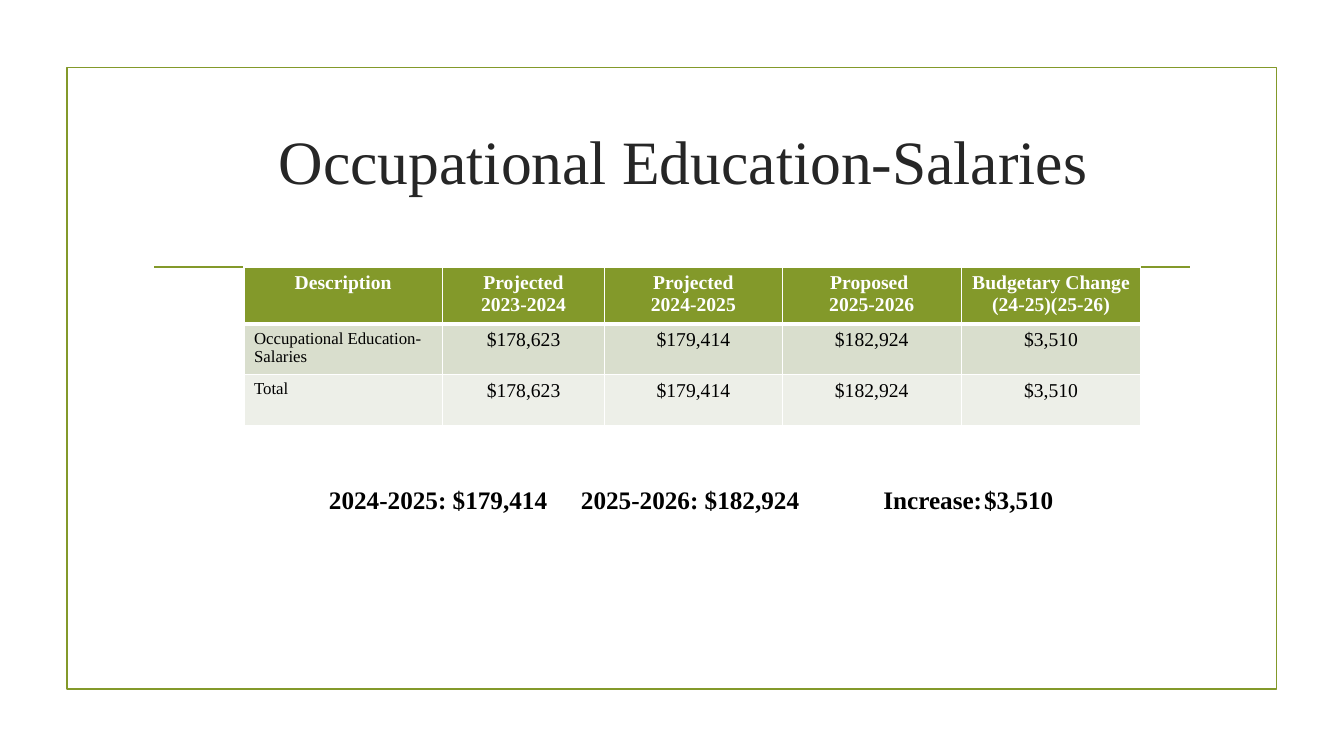
from dataclasses import dataclass

from lxml.etree import SubElement
from pptx import Presentation
from pptx.dml.color import RGBColor as RGB
from pptx.enum.shapes import MSO_CONNECTOR as Conn, MSO_SHAPE as Shape
from pptx.enum.text import MSO_ANCHOR as Anchor, PP_ALIGN as Align
from pptx.oxml.ns import qn
from pptx.util import Cm, Pt

TITLE = "Occupational Education-Salaries "
ROWS = [
    ["Description", "Projected\n2023-2024", "Projected\n2024-2025",
     "Proposed \n2025-2026", "Budgetary Change \n(24-25)(25-26)"],
    ["Occupational Education-Salaries", "$178,623", "$179,414", "$182,924", "$3,510"],
    ["Total", "$178,623", "$179,414", "$182,924", "$3,510"],
]
SUMMARY = "2024-2025: $179,414\t2025-2026: $182,924\t\tIncrease:\t$3,510"
COL_WIDTHS = [5, 4.09, 4.47, 4.52, 4.52]
ROW_HEIGHTS = [1.44, 1.27, 1.27]


@dataclass(frozen=True)
class Theme:
    font: str = "Times New Roman"
    accent: str = "83992A"
    title: str = "262626"
    text: str = "000000"
    white: str = "FFFFFF"
    fills: tuple = ("83992A", "D9DECD", "EDEFE8")
    title_size: int = 44
    summary_size: int = 18
    cell_size: int = 14
    label_size: int = 12
    line: float = 1.25
    border: int = 1
    header_border: int = 3


T = Theme()


def write(tf, text, size, color, bold=False, align=Align.CENTER):
    tf.word_wrap = True
    tf.text = text
    for p in tf.paragraphs:
        p.alignment = align
        p.font.name = T.font
        p.font.size = Pt(size)
        p.font.bold = bold
        p.font.color.rgb = RGB.from_string(color)


def add_text(slide, box, *style):
    tf = slide.shapes.add_textbox(*map(Cm, box)).text_frame
    tf.vertical_anchor = Anchor.MIDDLE
    write(tf, *style)


def outline(sp):
    sp.line.color.rgb = RGB.from_string(T.accent)
    sp.line.width = Pt(T.line)


def set_borders(cell, row):
    widths = {"L": T.border, "R": T.border,
              "T": T.header_border if row == 1 else T.border,
              "B": T.header_border if row == 0 else T.border}
    tc_pr = cell._tc.get_or_add_tcPr()
    for side, width in widths.items():
        ln = SubElement(tc_pr, qn(f"a:ln{side}"), w=str(Pt(width)))
        fill = SubElement(ln, qn("a:solidFill"))
        SubElement(fill, qn("a:srgbClr"), val=T.white)


def add_budget_table(slide, left, top):
    size = Cm(sum(COL_WIDTHS)), Cm(sum(ROW_HEIGHTS))
    table = slide.shapes.add_table(len(ROWS), len(COL_WIDTHS),
                                   Cm(left), Cm(top), *size).table
    for col, width in zip(table.columns, COL_WIDTHS):
        col.width = Cm(width)
    for r, (height, values) in enumerate(zip(ROW_HEIGHTS, ROWS)):
        table.rows[r].height = Cm(height)
        for c, value in enumerate(values):
            cell = table.cell(r, c)
            header, label = r == 0, r > 0 and c == 0
            set_borders(cell, r)
            cell.fill.solid()
            cell.fill.fore_color.rgb = RGB.from_string(T.fills[r])
            write(cell.text_frame, value,
                  T.label_size if label else T.cell_size,
                  T.white if header else T.text, header,
                  Align.LEFT if label else Align.CENTER)


def main():
    prs = Presentation()
    prs.slide_width, prs.slide_height = Cm(33.87), Cm(19.05)
    slide = prs.slides.add_slide(prs.slide_layouts[6])

    frame = slide.shapes.add_shape(Shape.RECTANGLE, *map(Cm, (1.69, 1.7, 30.48, 15.67)))
    frame.shadow.inherit = False
    frame.fill.background()
    outline(frame)

    rule = slide.shapes.add_connector(Conn.STRAIGHT, *map(Cm, (3.89, 6.73, 30, 6.73)))
    SubElement(rule._element.spPr, qn("a:effectLst"))
    outline(rule)

    add_text(slide, (4.09, 2.21, 26.67, 3.63), TITLE, T.title_size, T.title)
    add_budget_table(slide, 6.15, 6.73)
    add_text(slide, (6.32, 12.07, 22.2, 1.02), SUMMARY, T.summary_size, T.text, True)

    prs.save("out.pptx")


if __name__ == "__main__":
    main()
